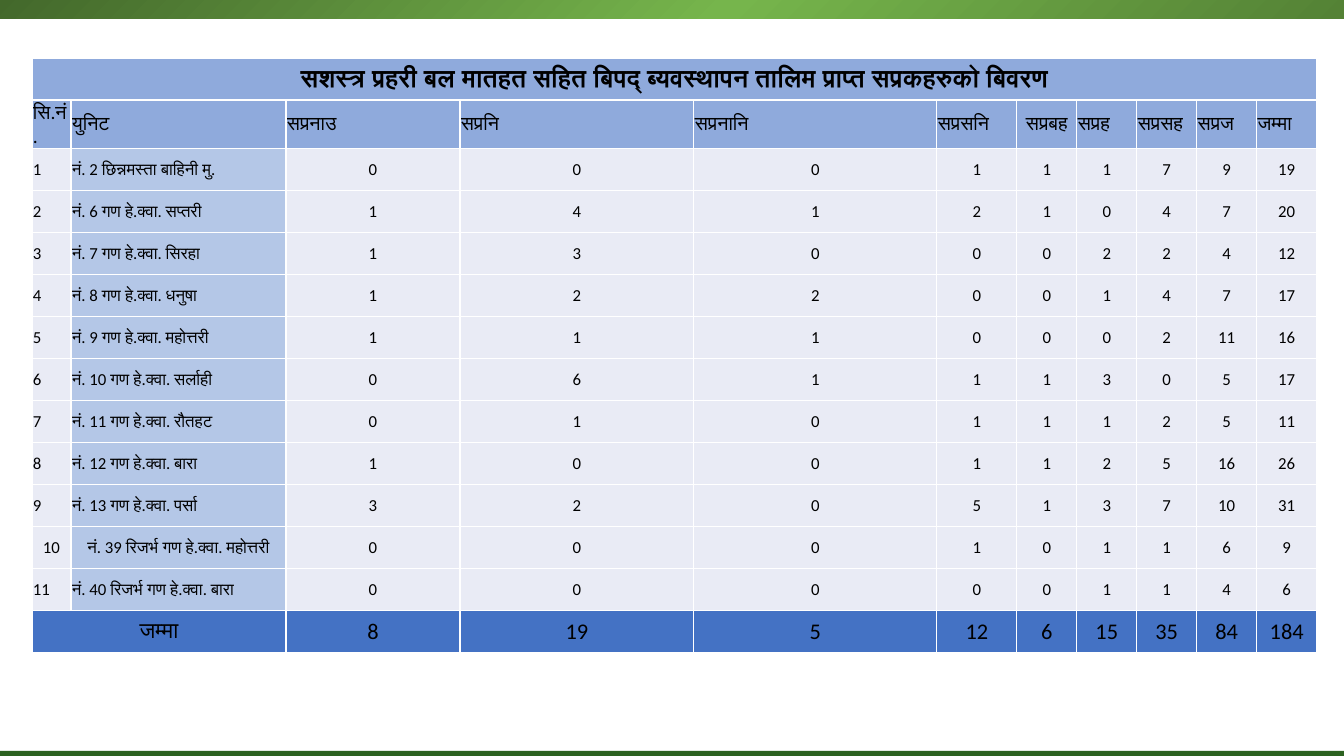
from lxml.etree import SubElement, fromstring
from pptx import Presentation
from pptx.dml.color import RGBColor
from pptx.enum.shapes import MSO_SHAPE as SHAPE
from pptx.enum.text import MSO_ANCHOR as ANCHOR, PP_ALIGN as ALIGN
from pptx.oxml.ns import nsdecls, qn
from pptx.util import Pt

PX = 914400 / 100.8
FONT = "Calibri"
BLACK = RGBColor(0x00, 0x00, 0x00)
WHITE = RGBColor(0xFF, 0xFF, 0xFF)
DARK_GREEN = RGBColor(0x2C, 0x62, 0x20)
GREEN = RGBColor(0x54, 0x82, 0x35)
BRIGHT_GREEN = RGBColor(0x76, 0xB5, 0x4C)
DEEP_GREEN = RGBColor(0x43, 0x68, 0x2B)
HEADER_BLUE = RGBColor(0x8F, 0xAA, 0xDC)
UNIT_BLUE = RGBColor(0xB4, 0xC7, 0xE7)
TOTAL_BLUE = RGBColor(0x44, 0x72, 0xC4)
PALE = RGBColor(0xE9, 0xEB, 0xF5)

TITLE = "सशस्त्र प्रहरी बल मातहत सहित बिपद् ब्यवस्थापन तालिम प्राप्त सप्रकहरुको बिवरण"
HEADERS = ["सि.नं.", "युनिट", "सप्रनाउ", "सप्रनि", "सप्रनानि", "सप्रसनि",
           "सप्रबह", "सप्रह", "सप्रसह", "सप्रज", "जम्मा"]
UNITS = [
    ("नं. 2 छिन्नमस्ता बाहिनी मु.", [0, 0, 0, 1, 1, 1, 7, 9]),
    ("नं. 6 गण हे.क्वा. सप्तरी", [1, 4, 1, 2, 1, 0, 4, 7]),
    ("नं. 7 गण हे.क्वा. सिरहा", [1, 3, 0, 0, 0, 2, 2, 4]),
    ("नं. 8 गण हे.क्वा. धनुषा", [1, 2, 2, 0, 0, 1, 4, 7]),
    ("नं. 9 गण हे.क्वा. महोत्तरी", [1, 1, 1, 0, 0, 0, 2, 11]),
    ("नं. 10 गण हे.क्वा. सर्लाही", [0, 6, 1, 1, 1, 3, 0, 5]),
    ("नं. 11 गण हे.क्वा. रौतहट", [0, 1, 0, 1, 1, 1, 2, 5]),
    ("नं. 12 गण हे.क्वा. बारा", [1, 0, 0, 1, 1, 2, 5, 16]),
    ("नं. 13 गण हे.क्वा. पर्सा", [3, 2, 0, 5, 1, 3, 7, 10]),
    ("नं. 39 रिजर्भ गण हे.क्वा. महोत्तरी", [0, 0, 0, 1, 0, 1, 1, 6]),
    ("नं. 40 रिजर्भ गण हे.क्वा. बारा", [0, 0, 0, 0, 0, 1, 1, 4]),
]
CENTRED_UNIT = 10
COLUMN_WIDTHS = [39, 215, 174, 234, 243, 80, 60, 60, 60, 60, 60]
ROW_HEIGHT = 42


def px(length):
    return round(length * PX)


def fill_cell(cell, words, size, color, centred, bold=False):
    cell.margin_left = cell.margin_right = cell.margin_top = px(1)
    cell.margin_bottom = 0
    cell.vertical_anchor = ANCHOR.MIDDLE
    properties = cell._tc.get_or_add_tcPr()
    for side in ("lnL", "lnR", "lnT", "lnB"):
        border = SubElement(properties, qn(f"a:{side}"), w=str(Pt(1)))
        paint = SubElement(border, qn("a:solidFill"))
        SubElement(paint, qn("a:srgbClr"), val=str(WHITE))
    cell.fill.solid()
    cell.fill.fore_color.rgb = color
    if not words:
        return
    para = cell.text_frame.paragraphs[0]
    para.alignment = ALIGN.CENTER if centred else ALIGN.LEFT
    span = para.add_run()
    span.text = words
    span.font.name = FONT
    span.font.size = Pt(size)
    span.font.bold = bold
    span.font.color.rgb = BLACK


deck = Presentation()
deck.slide_width, deck.slide_height = px(1344), px(756)
page = deck.slides.add_slide(deck.slide_layouts[6])

bars = []
for top, height in ((751, 5), (-3, 22)):
    bar = page.shapes.add_shape(SHAPE.RECTANGLE, px(-1), px(top), px(1345), px(height))
    bar.shadow.inherit = False
    bar.line.fill.background()
    bars.append(bar)
bottom_bar, top_bar = bars
bottom_bar.fill.solid()
bottom_bar.fill.fore_color.rgb = DARK_GREEN
stops = "".join(
    f'<a:gs pos="{place * 1000}"><a:srgbClr val="{color}"/></a:gs>'
    for place, color in ((0, GREEN), (46, BRIGHT_GREEN), (100, DEEP_GREEN)))
top_bar._element.spPr.insert(2, fromstring(
    f'<a:gradFill {nsdecls("a")}><a:gsLst>{stops}</a:gsLst>'
    '<a:path path="circle"><a:fillToRect l="100000" t="100000"/></a:path></a:gradFill>'))

row_count = len(UNITS) + 3
table = page.shapes.add_table(row_count, len(HEADERS), px(32), px(58),
                              px(sum(COLUMN_WIDTHS)), px(row_count * ROW_HEIGHT)).table
table.first_row = table.horz_banding = False
for column, width in zip(table.columns, COLUMN_WIDTHS):
    column.width = px(width)
for row in table.rows:
    row.height = px(ROW_HEIGHT)
table.cell(0, 0).merge(table.cell(0, len(HEADERS) - 1))
table.cell(row_count - 1, 0).merge(table.cell(row_count - 1, 1))

for index, header in enumerate(HEADERS):
    fill_cell(table.cell(0, index), "" if index else TITLE, 18, HEADER_BLUE, True, True)
    fill_cell(table.cell(1, index), header, 14, HEADER_BLUE, header == "सप्रबह")

for number, (unit, counts) in enumerate(UNITS, 1):
    for index, value in enumerate([number, unit, *counts, sum(counts)]):
        fill_cell(table.cell(number + 1, index), str(value), 12,
                  UNIT_BLUE if index == 1 else PALE,
                  index > 1 or number == CENTRED_UNIT)

totals = [sum(column) for column in zip(*(counts for unit, counts in UNITS))]
for index, value in enumerate(["जम्मा", "", *totals, sum(totals)]):
    fill_cell(table.cell(row_count - 1, index), str(value), 16, TOTAL_BLUE, True)

deck.save("out.pptx")
